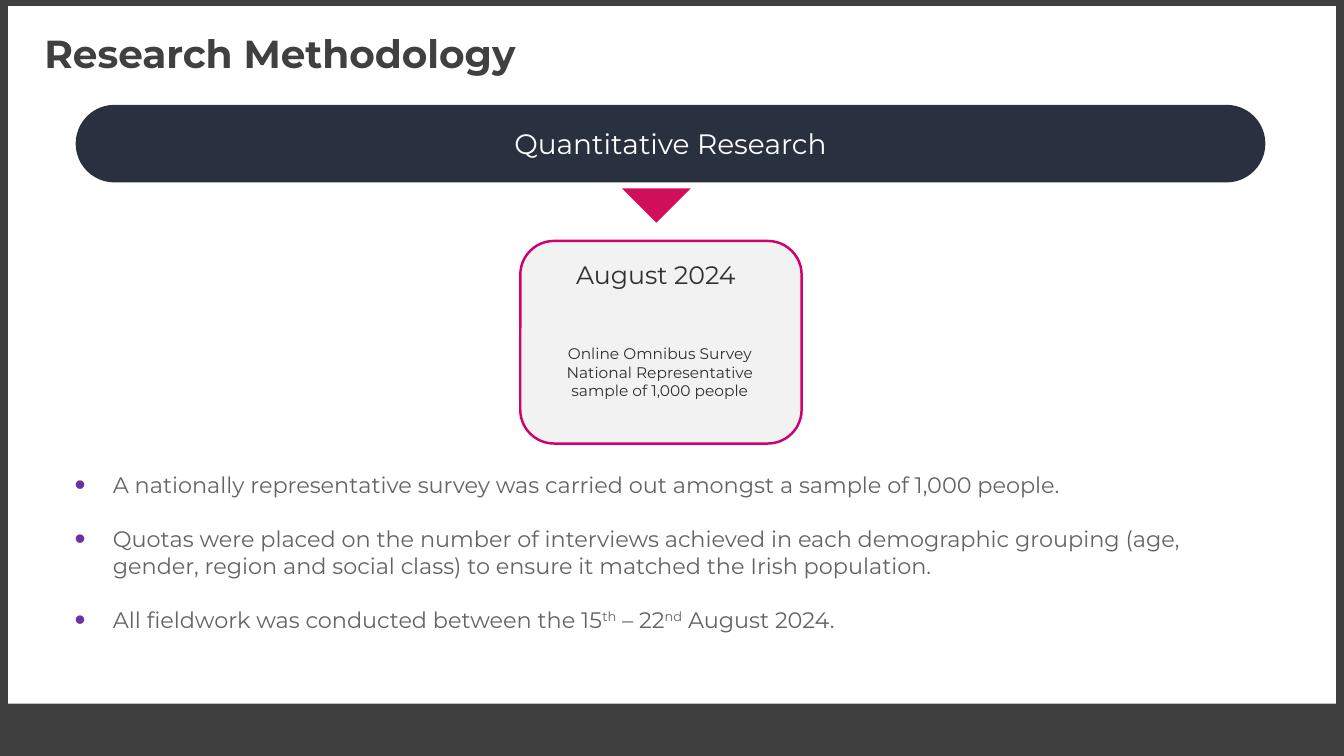
"""Builds the research methodology slide."""
from lxml import etree
from pptx import Presentation
from pptx.dml.color import RGBColor
from pptx.enum.shapes import MSO_SHAPE
from pptx.enum.text import MSO_ANCHOR, MSO_AUTO_SIZE, PP_ALIGN
from pptx.oxml.ns import qn
from pptx.util import Inches, Pt

RECT, ROUND = MSO_SHAPE.RECTANGLE, MSO_SHAPE.ROUNDED_RECTANGLE
ARROW = MSO_SHAPE.ISOSCELES_TRIANGLE
LEFT, CENTER = PP_ALIGN.LEFT, PP_ALIGN.CENTER
TOP, MIDDLE = MSO_ANCHOR.TOP, MSO_ANCHOR.MIDDLE
NONE = MSO_AUTO_SIZE.NONE

FONT = "Montserrat"
DARK, WHITE, NAVY, PINK = "3F403F", "FFFFFF", "293040", "D00E59"
EDGE, PALE, INK, GREY, PURPLE = "D0006F", "F2F2F2", "2F302F", "646563", "7030A0"

TITLE = "Research Methodology"
BANNER = "Quantitative Research"
DATE = "August 2024"
SAMPLE = ["Online Omnibus Survey", "National Representative sample of 1,000 people"]
POINTS = [
    ["A nationally representative survey was carried out amongst a sample of 1,000 people."],
    ["Quotas were placed on the number of interviews achieved in each demographic grouping "
     "(age, gender, region and social class) to ensure it matched the Irish population."],
    ["All fieldwork was conducted between the 15", "th", " – 22", "nd", " August 2024."],
]

AREAS = {
    "panel": (0.6, 0.8, 98.8, 92.27),
    "title": (2.55, 2.67, 94.5, 8.53),
    "banner": (5.63, 13.87, 88.52, 10.27),
    "arrow": (46.29, 24.93, 5.1, 4.53),
    "card": (38.71, 31.87, 20.93, 26.8),
    "date": (38.63, 33.6, 20.33, 5.33),
    "sample": (40.06, 44.93, 18.08, 8.8),
    "points": (4.8, 61.6, 88.52, 26.53),
}

deck = Presentation()
deck.slide_width, deck.slide_height = Inches(13.33), Inches(7.5)
slide = deck.slides.add_slide(deck.slide_layouts[1])
shapes = slide.shapes


def color(code):
    """Return the colour of a hex string."""
    return RGBColor.from_string(code)


def place(name):
    """Return left, top, width and height from percent shares."""
    sides = (deck.slide_width, deck.slide_height) * 2
    return [int(side * share / 100) for side, share in zip(sides, AREAS[name])]


def move(shape, name):
    """Put a placeholder in its area."""
    shape.left, shape.top, shape.width, shape.height = place(name)


def draw(kind, name, fill, line=None):
    """Add a flat shape."""
    shape = shapes.add_shape(kind, *place(name))
    shape.shadow.inherit = False
    shape.fill.solid()
    shape.fill.fore_color.rgb = color(fill)
    if line:
        shape.line.color.rgb = color(line)
        shape.line.width = Pt(1.75)
    else:
        shape.line.fill.background()
    return shape


def style(shape, size, code, align=CENTER, anchor=TOP, bold=False):
    """Format all text in a shape."""
    frame = shape.text_frame
    frame.word_wrap, frame.auto_size = True, NONE
    frame.vertical_anchor = anchor
    for para in frame.paragraphs:
        para.alignment = align
        for run in para.runs:
            run.font.name, run.font.size, run.font.bold = FONT, Pt(size), bold
            run.font.color.rgb = color(code)


def label(name, text, size):
    """Add a centred text box."""
    box = shapes.add_textbox(*place(name))
    box.text_frame.text = text
    style(box, size, INK)


def bullet(para):
    """Give a paragraph a large purple bullet and a hanging indent."""
    props = para._p.get_or_add_pPr()
    props.set("marL", str(Inches(0.38)))
    props.set("indent", str(-Inches(0.38)))
    tint = etree.SubElement(props, qn("a:buClr"))
    etree.SubElement(tint, qn("a:srgbClr"), val=PURPLE)
    etree.SubElement(props, qn("a:buSzPct"), val="140000")
    etree.SubElement(props, qn("a:buFont"), typeface="Arial")
    etree.SubElement(props, qn("a:buChar"), char="•")


def fill_list(body):
    """Write the bullet points, with every second run raised."""
    frame = body.text_frame
    for row, parts in enumerate(POINTS):
        para = frame.add_paragraph() if row else frame.paragraphs[0]
        bullet(para)
        para.space_before = Pt(19.5 if row else 0)
        for col, part in enumerate(parts):
            run = para.add_run()
            run.text = part
            if col % 2:
                run._r.get_or_add_rPr().set("baseline", "30000")
    style(body, 16, GREY, LEFT)


back = slide.background.fill
back.solid()
back.fore_color.rgb = color(DARK)
panel = draw(RECT, "panel", WHITE)
shapes._spTree.insert(2, panel._element)

title, body = slide.placeholders
move(title, "title")
title.text_frame.text = TITLE
style(title, 27.9, DARK, LEFT, MIDDLE, True)

banner = draw(ROUND, "banner", NAVY)
banner.adjustments[0] = 0.5
banner.text_frame.text = BANNER
style(banner, 20, WHITE, anchor=MIDDLE)

draw(ARROW, "arrow", PINK).rotation = 180
draw(ROUND, "card", PALE, EDGE)
label("date", DATE, 18)
label("sample", "\n".join(SAMPLE), 11)

move(body, "points")
fill_list(body)
deck.save("out.pptx")
